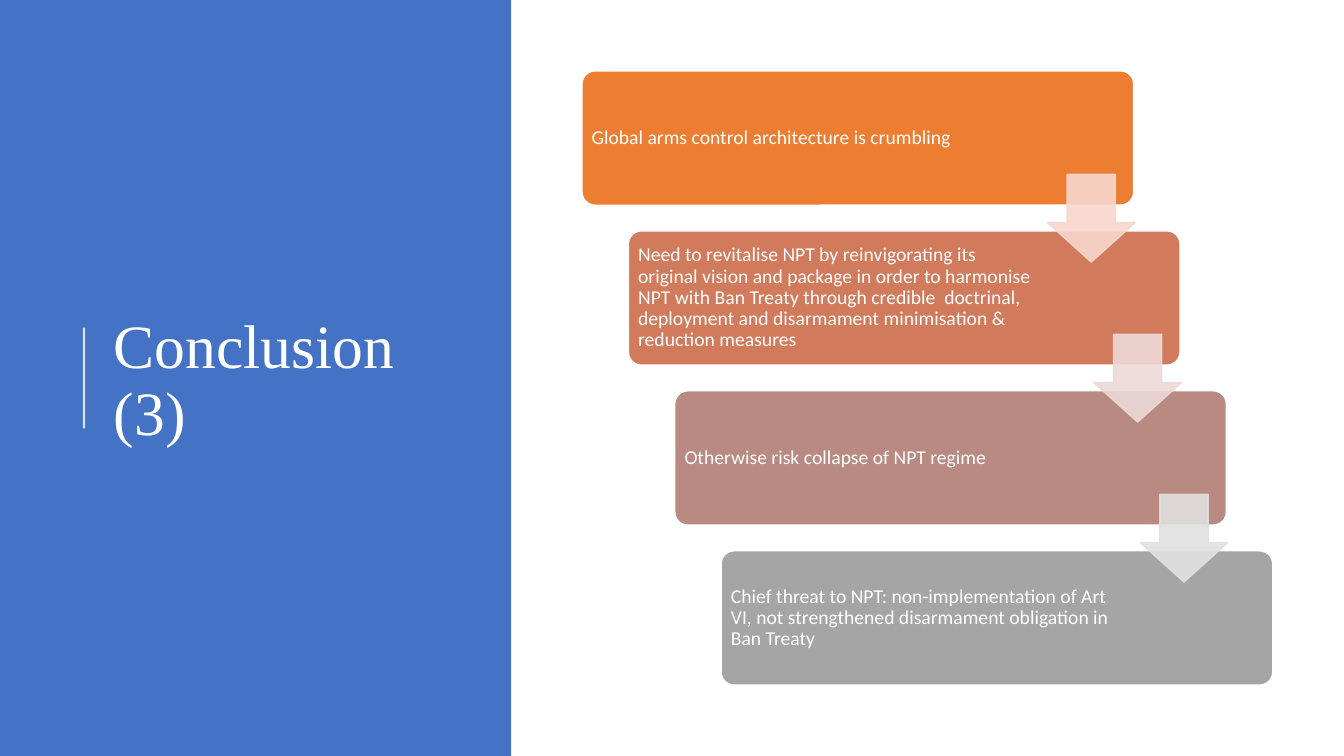
"""Build the conclusion slide: a title panel and a staircase of four linked cards."""
from dataclasses import dataclass

from lxml import etree
from pptx import Presentation
from pptx.dml.color import RGBColor
from pptx.enum.shapes import MSO_CONNECTOR, MSO_SHAPE
from pptx.enum.text import MSO_ANCHOR
from pptx.oxml.ns import qn
from pptx.util import Inches, Pt

RECT = MSO_SHAPE.RECTANGLE
ROUND = MSO_SHAPE.ROUNDED_RECTANGLE
DOWN = MSO_SHAPE.DOWN_ARROW
LINE = MSO_CONNECTOR.STRAIGHT
MIDDLE = MSO_ANCHOR.MIDDLE


@dataclass(frozen=True)
class Theme:
    panel: str = "4472C4"
    white: str = "FFFFFF"
    cards: tuple = ("ED7D31", "D17B5C", "B98A82", "A5A5A5")
    arrows: tuple = ("F8D7CE", "EDD9D7", "E1E1E1")
    title: int = 44
    body: int = 14
    serif: str = "Times New Roman"
    sans: str = "Calibri"


def paint(fill, color, alpha=100):
    fill.solid()
    fill.fore_color.rgb = RGBColor.from_string(color)
    if alpha < 100:
        for tint in fill._xPr.iter(qn("a:srgbClr")):
            etree.SubElement(tint, qn("a:alpha"), val=str(alpha * 1000))


def write(frame, text, *, font, size, color, inset=None):
    frame.word_wrap = True
    frame.vertical_anchor = MIDDLE
    if inset is not None:
        frame.margin_left = frame.margin_right = Inches(inset)
        frame.margin_top = frame.margin_bottom = Inches(inset)
    para = frame.paragraphs[0]
    para.line_spacing = 0.9
    run = para.add_run()
    run.text = text
    run.font.name = font
    run.font.size = Pt(size)
    run.font.color.rgb = RGBColor.from_string(color)


class Deck:
    def __init__(self, theme):
        self.theme = theme
        self.file = Presentation()
        self.file.slide_width = Inches(13.33)
        self.file.slide_height = Inches(7.5)
        self.slide = self.file.slides.add_slide(self.file.slide_layouts[6])

    def place(self, x, y, w, h):
        col = self.file.slide_width / 100
        row = self.file.slide_height / 100
        return round(x * col), round(y * row), round(w * col), round(h * row)

    def shape(self, kind, box, color, *, edge=None, width=1, alpha=100, adjust=()):
        shape = self.slide.shapes.add_shape(kind, *self.place(*box))
        shape.shadow.inherit = False
        for index, value in enumerate(adjust):
            shape.adjustments[index] = value
        paint(shape.fill, color, alpha)
        if edge:
            shape.line.width = Pt(width)
            paint(shape.line.fill, edge, alpha)
        else:
            shape.line.fill.background()

    def text(self, box, text, **style):
        area = self.slide.shapes.add_textbox(*self.place(*box))
        write(area.text_frame, text, **style)

    def rule(self, x, top, end):
        left, start, _, drop = self.place(x, top, 0, end - top)
        line = self.slide.shapes.add_connector(LINE, left, start + drop, left, start)
        line.line.width = Pt(1.5)
        paint(line.line.fill, self.theme.white, 80)
        etree.SubElement(line._element.spPr, qn("a:effectLst"))

    def card(self, x, y, color, text, wide):
        look = self.theme
        self.shape(ROUND, (x, y, 41.1, 17.87), color,
                   edge=look.white, width=1.5, adjust=(0.1,))
        self.text((x + 0.3, y + 0.53, wide, 16.8), text, font=look.sans,
                  size=look.body, color=look.white, inset=0.06)

    def arrow(self, x, y, color):
        self.shape(DOWN, (x, y, 6.53, 11.6), color,
                   edge=color, alpha=90, adjust=(0.55, 0.45))


def main():
    look = Theme()
    deck = Deck(look)
    deck.shape(RECT, (0, 0, 38.03, 100), look.panel)
    deck.text((7.73, 10.4, 27.68, 80.27), "Conclusion (3)",
              font=look.serif, size=look.title, color=look.white)
    deck.rule(6.25, 43.33, 56.67)

    points = (
        "Global arms control architecture is crumbling",
        "Need to revitalise NPT by reinvigorating its original vision and package "
        "in order to harmonise NPT with Ban Treaty through credible  doctrinal, "
        "deployment and disarmament minimisation & reduction measures",
        "Otherwise risk collapse of NPT regime",
        "Chief threat to NPT: non-implementation of Art VI, not strengthened "
        "disarmament obligation in Ban Treaty",
    )
    across, down = 3.45, 21.16
    for step, (text, color) in enumerate(zip(points, look.cards)):
        wide = 30.6 if step else 29.4
        deck.card(43.28 + step * across, 9.33 + step * down, color, text, wide)
    for step, color in enumerate(look.arrows):
        deck.arrow(77.93 + step * across, 23.07 + step * down, color)
    deck.file.save("out.pptx")


if __name__ == "__main__":
    main()
